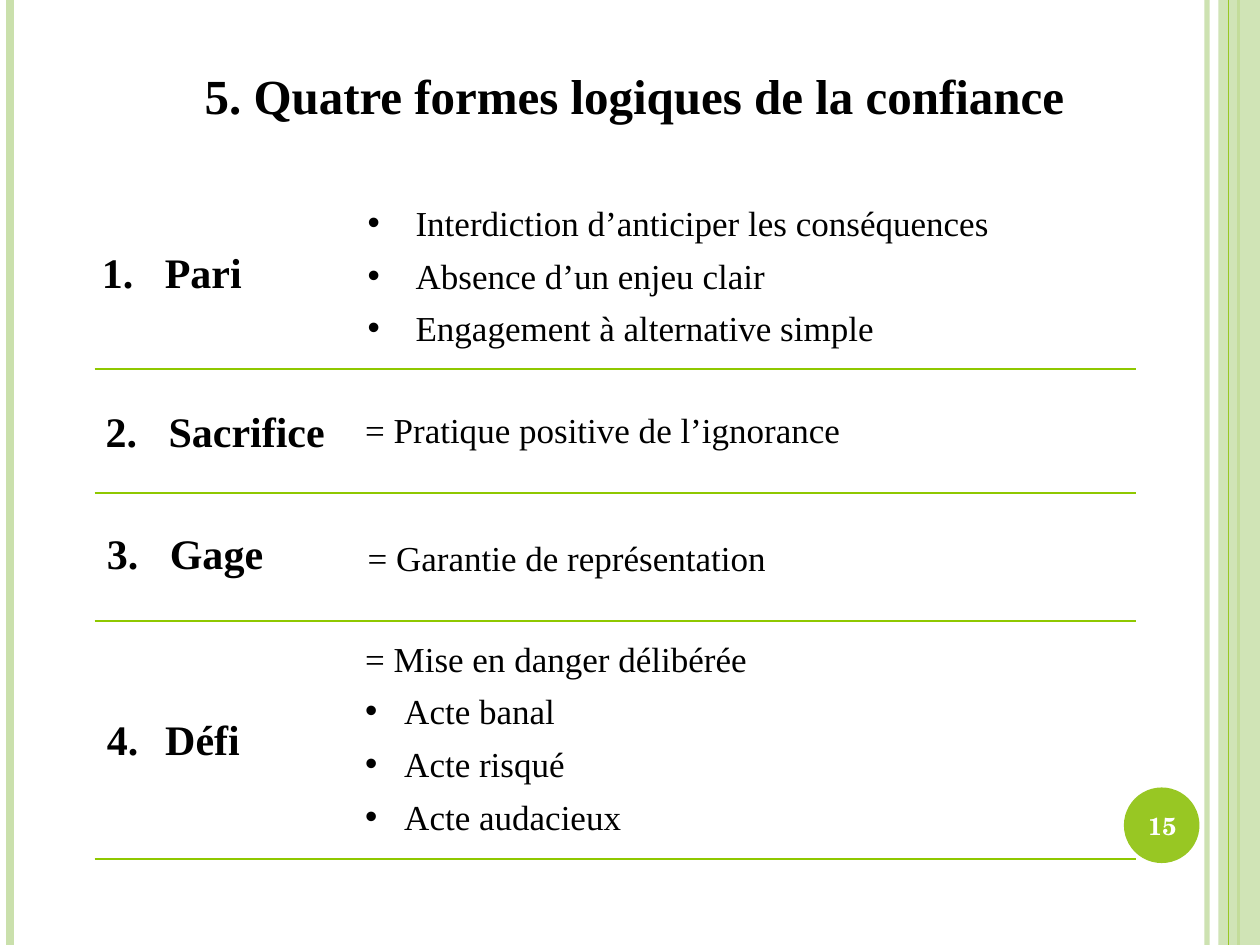
import pptx
import pptx.util
import pptx.dml.color
import pptx.enum.shapes
import pptx.enum.text
import pptx.oxml.ns
from lxml import etree

Inches = pptx.util.Inches
Pt = pptx.util.Pt
qn = pptx.oxml.ns.qn
SHAPES = pptx.enum.shapes.MSO_SHAPE
ALIGN = pptx.enum.text.PP_ALIGN
ANCHOR = pptx.enum.text.MSO_ANCHOR

WIDTH, HEIGHT = 10, 7.5
PALE, GREEN, RULE = "CAE0AC", "98C723", "8FC800"
SERIF = "Times New Roman"

TITLE = "5. Quatre formes logiques de la confiance"
PAGE_NUMBER = "15"

# Each form: name, name box (left, top, width, height), name indent,
# detail box, lead line, bullets, bullet indent
FORMS = [
    ("Pari", (0.71, 1.91, 1.69, 0.5), 0.5, (2.82, 1.55, 5.2, 1.28), None,
     ["Interdiction d’anticiper les conséquences",
      "Absence d’un enjeu clair",
      "Engagement à alternative simple"], 0.38),
    ("Sacrifice", (0.74, 3.17, 2.06, 0.5), 0.5, (2.8, 3.19, 5, 0.44),
     "= Pratique positive de l’ignorance", [], 0),
    ("Gage", (0.75, 4.14, 1.66, 0.5), 0.5, (2.82, 4.21, 5, 0.44),
     "= Garantie de représentation", [], 0),
    (" Défi", (0.75, 5.61, 1.5, 0.5), 0.38, (2.8, 5.01, 6.22, 1.7),
     "= Mise en danger délibérée",
     ["Acte banal", "Acte risqué", "Acte audacieux"], 0.31),
]
RULE_LEFT, RULE_RIGHT = 0.75, 9.02
RULE_TOPS = [2.93, 3.91, 4.93, 6.82]


def paint(color_format, color, opacity=100):
    """Set a hex colour, with opacity in percent."""
    color_format.rgb = pptx.dml.color.RGBColor.from_string(color)
    if opacity < 100:
        node = color_format._xFill.find(qn("a:srgbClr"))
        etree.SubElement(node, qn("a:alpha"), val=str(opacity * 1000))


def add_line(start, end, color, width, opacity=100):
    line = page.shapes.add_connector(
        pptx.enum.shapes.MSO_CONNECTOR.STRAIGHT,
        *(Inches(value) for value in start + end))
    line.line.width = Pt(width)
    line.line.fill.solid()
    paint(line.line.fill.fore_color, color, opacity) if opacity == 100 else \
        paint_fill(line.line.fill, line._element.spPr, color, opacity)
    etree.SubElement(line._element.spPr, qn("a:effectLst"))


def paint_fill(fill, properties, color, opacity=100):
    """Give a solid fill a hex colour, with opacity in percent."""
    fill.solid()
    paint(fill.fore_color, color)
    if opacity < 100:
        node = next(properties.iter(qn("a:srgbClr")))
        etree.SubElement(node, qn("a:alpha"), val=str(opacity * 1000))


def add_block(kind, place, color, opacity=100):
    block = page.shapes.add_shape(kind, *(Inches(value) for value in place))
    block.shadow.inherit = False
    paint_fill(block.fill, block._element.spPr, color, opacity)
    block.line.fill.background()


def add_text_box(place, anchor=ANCHOR.TOP):
    box = page.shapes.add_textbox(*(Inches(value) for value in place))
    box.text_frame.word_wrap = True
    box.text_frame.vertical_anchor = anchor
    return box.text_frame


def write(frame, text, size=20, bold=False, color="000000", font=SERIF,
          align=ALIGN.LEFT, before=0, indent=0, bullet=None, number=None):
    """Add a paragraph, using the empty first one if there is one."""
    para = frame.paragraphs[0]
    if para.runs:
        para = frame.add_paragraph()
    para.alignment = align
    para.space_before = Pt(before)
    span = para.add_run()
    span.text = text
    span.font.size, span.font.bold, span.font.name = Pt(size), bold, font
    paint(span.font.color, color)
    properties = para._p.get_or_add_pPr()
    if bullet or number:
        properties.set("marL", str(Inches(indent)))
        properties.set("indent", str(-Inches(indent)))
    if bullet:
        etree.SubElement(properties, qn("a:buFont"), typeface="Arial")
        etree.SubElement(properties, qn("a:buChar"), char=bullet)
    if number:
        etree.SubElement(properties, qn("a:buFont"), typeface="+mj-lt")
        etree.SubElement(properties, qn("a:buAutoNum"),
                         type="arabicPeriod", startAt=str(number))


deck = pptx.Presentation()
deck.slide_width, deck.slide_height = Inches(WIDTH), Inches(HEIGHT)
page = deck.slides.add_slide(deck.slide_layouts[6])

# Side bands and page number disc
for x, color, width, opacity in [(9.58, PALE, 3, 93), (0.08, PALE, 4.5, 100),
                                 (9.83, GREEN, 1.5, 100)]:
    add_line((x, 0), (x, HEIGHT), color, width, opacity)
add_block(SHAPES.RECTANGLE, (9.67, 0, 0.33, HEIGHT), PALE, 87)
add_line((9.75, 0), (9.75, HEIGHT), GREEN, 0.75)
add_block(SHAPES.OVAL, (8.92, 6.25, 0.6, 0.6), GREEN)

# Title
write(add_text_box((1.06, 0.47, 7.95, 0.57)), TITLE, size=28, bold=True,
      align=ALIGN.CENTER)

# Numbered forms with their details, each closed by a rule
for number, (form, rule_top) in enumerate(zip(FORMS, RULE_TOPS), 1):
    name, name_place, name_indent, place, lead, bullets, indent = form
    write(add_text_box(name_place), name, size=24, bold=True,
          indent=name_indent, number=number)
    details = add_text_box(place)
    if lead:
        write(details, lead)
    for item in bullets:
        write(details, item, before=6, indent=indent, bullet="•")
    add_line((RULE_LEFT, rule_top), (RULE_RIGHT, rule_top), RULE, 1)

# Page number
write(add_text_box((8.89, 6.27, 0.67, 0.57), ANCHOR.MIDDLE), PAGE_NUMBER,
      size=14, bold=True, color="FFFFFF", font="TeX Gyre Schola",
      align=ALIGN.CENTER)

deck.save("out.pptx")
